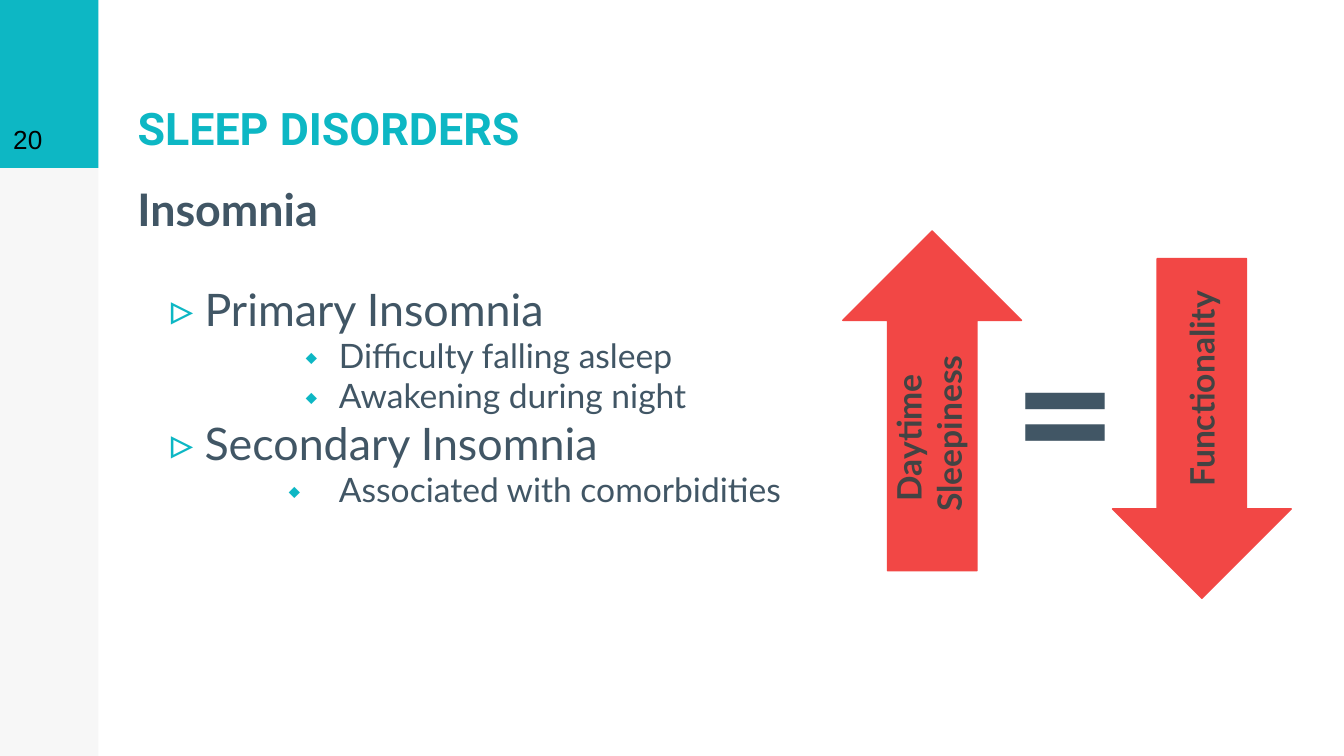
from dataclasses import dataclass

from lxml import etree
from pptx import Presentation
from pptx.dml.color import RGBColor
from pptx.enum.shapes import MSO_SHAPE
from pptx.enum.text import MSO_ANCHOR, MSO_AUTO_SIZE, PP_ALIGN
from pptx.oxml.ns import qn
from pptx.util import Pt

RECT, DOWN_ARROW = MSO_SHAPE.RECTANGLE, MSO_SHAPE.DOWN_ARROW
TOP, BOTTOM = MSO_ANCHOR.TOP, MSO_ANCHOR.BOTTOM
LEFT, CENTER = PP_ALIGN.LEFT, PP_ALIGN.CENTER
NO_AUTOFIT = MSO_AUTO_SIZE.NONE


@dataclass(frozen=True)
class Theme:
    teal: str = "0DB7C4"
    slate: str = "415665"
    red: str = "F24745"
    dark: str = "434343"
    black: str = "000000"
    title_font: str = "Roboto"
    body_font: str = "Lato"
    number_font: str = "Arial"
    heading: int = 24
    detail: int = 18
    number: int = 14
    symbol: int = 96
    inset: float = 7.2


def add_text(p, text, *, font, size, color, bold=False, align=LEFT):
    """Add one formatted run to a paragraph."""
    p.alignment = align
    r = p.add_run()
    r.text = text
    r.font.name, r.font.size, r.font.bold = font, Pt(size), bold
    r.font.color.rgb = RGBColor.from_string(color)


def add_bullet(p, char, font, color, margin, hang):
    """Give a paragraph a coloured bullet with a hanging indent, in points."""
    pPr = p._p.get_or_add_pPr()
    pPr.set("marL", str(Pt(margin)))
    pPr.set("indent", str(-Pt(hang)))
    clr = etree.SubElement(pPr, qn("a:buClr"))
    etree.SubElement(clr, qn("a:srgbClr"), val=color)
    etree.SubElement(pPr, qn("a:buFont"), typeface=font)
    etree.SubElement(pPr, qn("a:buChar"), char=char)


class SlideBuilder:
    def __init__(self, slide, theme):
        self.s, self.theme = slide, theme

    def frame(self, sp, anchor):
        tf = sp.text_frame
        tf.word_wrap, tf.auto_size = True, NO_AUTOFIT
        tf.vertical_anchor = anchor
        tf.margin_left = tf.margin_right = Pt(self.theme.inset)
        tf.margin_top = tf.margin_bottom = Pt(self.theme.inset)
        return tf

    def title(self, text, x, y, w, h, **fmt):
        sp = self.s.shapes.title
        sp.left, sp.top, sp.width, sp.height = Pt(x), Pt(y), Pt(w), Pt(h)
        add_text(self.frame(sp, BOTTOM).paragraphs[0], text, **fmt)

    def shape(self, kind, x, y, w, h, color, alpha=None, line=None, rotation=0):
        sp = self.s.shapes.add_shape(kind, Pt(x), Pt(y), Pt(w), Pt(h))
        sp.shadow.inherit = False
        sp.rotation = rotation
        sp.fill.solid()
        sp.fill.fore_color.rgb = RGBColor.from_string(color)
        if alpha is not None:
            clr = sp.fill._xPr.find(qn("a:solidFill"))[0]
            etree.SubElement(clr, qn("a:alpha"), val=str(alpha * 1000))
        if line is None:
            sp.line.fill.background()
        else:
            sp.line.color.rgb = RGBColor.from_string(color)
            sp.line.width = Pt(line)

    def text(self, lines, x, y, w, h, anchor=TOP, rotation=0, **fmt):
        sp = self.s.shapes.add_textbox(Pt(x), Pt(y), Pt(w), Pt(h))
        sp.rotation = rotation
        tf = self.frame(sp, anchor)
        for i, line in enumerate(lines):
            p = tf.add_paragraph() if i else tf.paragraphs[0]
            add_text(p, line, **fmt)

    def bullets(self, items, x, y, w, h):
        t = self.theme
        tf = self.frame(self.s.shapes.add_textbox(Pt(x), Pt(y), Pt(w), Pt(h)), TOP)
        for i, (level, text, hang) in enumerate(items):
            p = tf.add_paragraph() if i else tf.paragraphs[0]
            p.level = level
            char, margin, size = (("⬩", 108, t.detail) if level
                                  else ("▹", 36, t.heading))
            add_bullet(p, char, t.body_font, t.teal, margin, hang)
            add_text(p, text, font=t.body_font, size=size, color=t.slate)


def main():
    prs = Presentation()
    prs.slide_width, prs.slide_height = Pt(720), Pt(405)
    t = Theme()
    b = SlideBuilder(prs.slides.add_slide(prs.slide_layouts[5]), t)
    side_w, head_h, text_x = 52.75, 90, 66.5

    # Side band and slide number
    b.shape(RECT, 0, 0, side_w, 405, t.black, alpha=3)
    b.shape(RECT, 0, 0, side_w, head_h, t.teal)
    b.text(["20"], 0, 0, side_w, head_h, anchor=BOTTOM,
           font=t.number_font, size=t.number, color=t.black)

    # Title and subtitle
    b.title("SLEEP DISORDERS", text_x, 0, 280, head_h,
            font=t.title_font, size=t.heading, color=t.teal, bold=True)
    b.text(["Insomnia"], text_x, head_h, 289.5, 62.5,
           font=t.body_font, size=t.heading, color=t.slate, bold=True)

    # Types of insomnia: level, text, hanging indent
    b.bullets([
        (0, "Primary Insomnia", 18),
        (2, "Difficulty falling asleep", 18),
        (2, "Awakening during night", 18),
        (0, "Secondary Insomnia", 18),
        (2, "Associated with comorbidities", 27),
    ], text_x, 143.5, 376.5, 172)

    # Arrows: sleepiness up equals functionality down
    for x, y, rotation in ((451.5, 123.75, 180), (596, 138.5, 0)):
        b.shape(DOWN_ARROW, x, y, 95.75, 182, t.red, line=0.75, rotation=rotation)
    b.text(["="], 535.75, 152.5, 75.5, 74,
           font=t.body_font, size=t.symbol, color=t.slate, bold=True)
    for lines, x, y in ((["Daytime ", "Sleepiness"], 415.5, 206),
                        (["Functionality "], 572.5, 180)):
        b.text(lines, x, y, 158.5, 52.5, rotation=270, align=CENTER,
               font=t.body_font, size=t.detail, color=t.dark, bold=True)

    prs.save("out.pptx")


if __name__ == "__main__":
    main()
